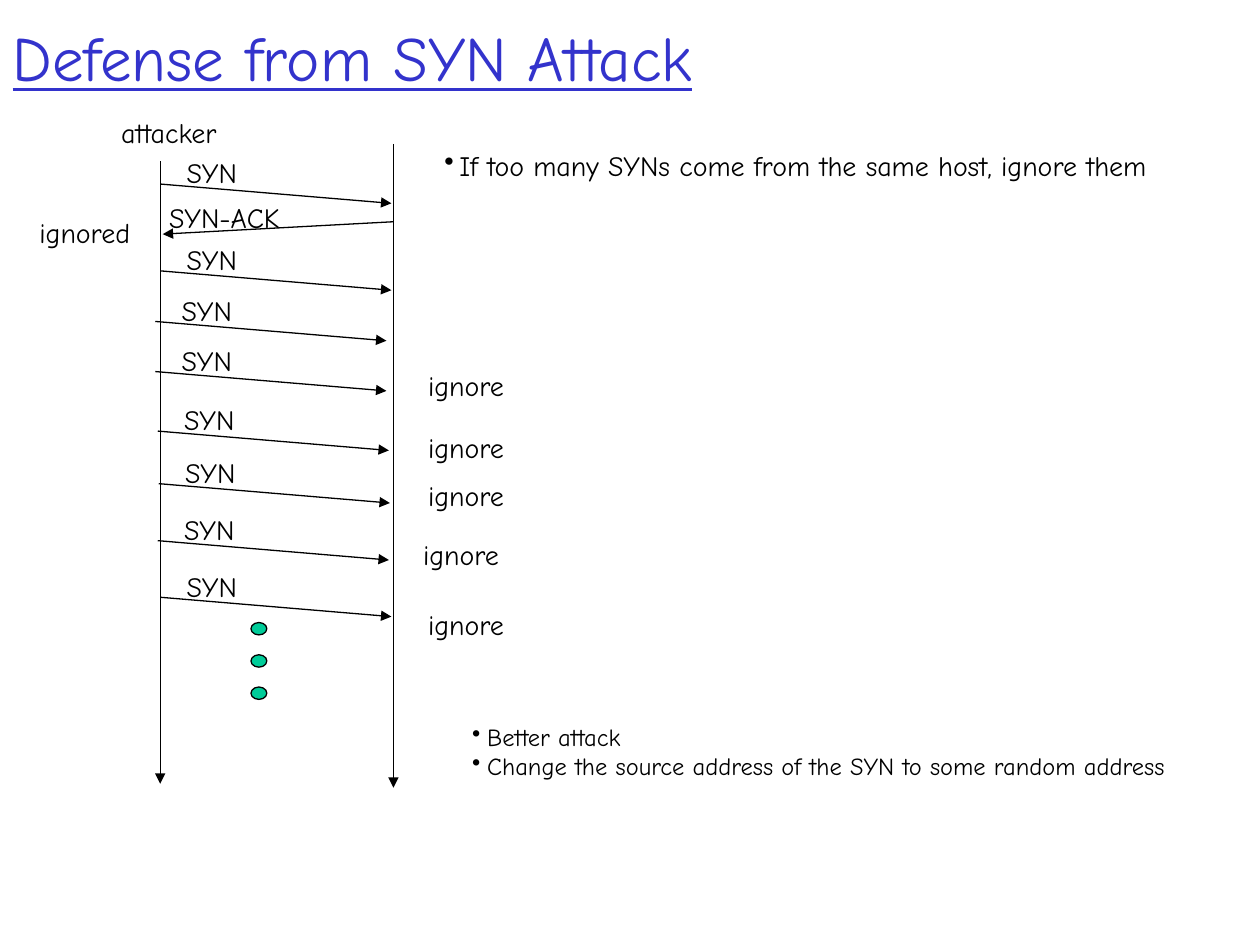
from lxml.etree import SubElement
from pptx import Presentation
from pptx.dml.color import RGBColor
from pptx.enum.shapes import MSO_CONNECTOR, MSO_SHAPE
from pptx.enum.text import MSO_ANCHOR, MSO_AUTO_SIZE, PP_ALIGN
from pptx.oxml.ns import qn
from pptx.util import Cm, Pt

FONT = "Comic Neue"
BLACK = RGBColor(0x00, 0x00, 0x00)
BLUE = RGBColor(0x33, 0x33, 0xCC)
GREEN = RGBColor(0x00, 0xCC, 0x99)

SERVER_X = 4.7  # distance between the two lifelines
LABEL_HEIGHT = 0.94
# Start of each SYN arrow, relative to the top of the attacker's lifeline
SYN_STARTS = [(0, 1.5), (0, 3.25), (-0.1, 4.27), (-0.1, 5.28),
              (-0.05, 6.48), (-0.03, 7.54), (-0.05, 8.69), (0, 9.83)]
IGNORE_SPOTS = [(5.1, 5.1), (5.1, 6.35), (5.1, 7.32), (5.0, 8.51), (5.1, 9.91)]


def style(para, size, color=BLACK):
    for span in para.runs:
        span.font.name = FONT
        span.font.size = Pt(size)
        span.font.color.rgb = color


def add_text(page, left, top, width, height, lines, size):
    box = page.shapes.add_textbox(Cm(left), Cm(top), Cm(width), Cm(height))
    frame = box.text_frame
    frame.text = "\n".join(lines)
    frame.word_wrap = False
    frame.auto_size = MSO_AUTO_SIZE.SHAPE_TO_FIT_TEXT
    for para in frame.paragraphs:
        style(para, size)
    return frame


def add_label(page, left, top, width, text):
    frame = add_text(page, left, top, width, LABEL_HEIGHT, [text], 16)
    frame.paragraphs[0].alignment = PP_ALIGN.CENTER


def add_arrow(page, x1, y1, x2, y2):
    arrow = page.shapes.add_connector(
        MSO_CONNECTOR.STRAIGHT, Cm(x1), Cm(y1), Cm(x2), Cm(y2))
    arrow.line.color.rgb = BLACK
    arrow.line.width = Pt(0.75)
    SubElement(arrow.line._get_or_add_ln(), qn("a:tailEnd"), type="triangle")
    SubElement(arrow._element.spPr, qn("a:effectLst"))


def add_title(page, left, top, width, height):
    title = page.shapes.title
    title.left, title.top = Cm(left), Cm(top)
    title.width, title.height = Cm(width), Cm(height)
    frame = title.text_frame
    frame.text = "Defense from SYN Attack"
    frame.vertical_anchor = MSO_ANCHOR.MIDDLE
    frame.auto_size = MSO_AUTO_SIZE.NONE
    para = frame.paragraphs[0]
    para.alignment = PP_ALIGN.LEFT
    style(para, 36, BLUE)
    para.runs[0].font.underline = True


def add_bullets(page, left, top, width, height, lines, size):
    frame = add_text(page, left, top, width, height, lines, size)
    for para in frame.paragraphs:
        props = para._p.get_or_add_pPr()
        props.set("marL", str(Cm(0.3)))
        props.set("indent", str(-Cm(0.3)))
        SubElement(props, qn("a:buChar"), char="•")


def add_sequence(page, left, top):
    """Message diagram; left is the attacker's lifeline, top its heading."""
    # Lifelines
    add_arrow(page, left, top + 1.04, left, top + 13.59)
    add_arrow(page, left + SERVER_X, top + 0.69, left + SERVER_X, top + 13.67)
    add_label(page, left - 1.22, top, 2.79, "attacker")

    # SYN messages
    for dx, dy in SYN_STARTS:
        x, y = left + dx, top + dy
        add_arrow(page, x, y, x + 4.66, y + 0.39)
        add_label(page, x + 0.19, y - 0.69, 1.7, "SYN")

    # The one reply, which the attacker ignores
    add_arrow(page, left + SERVER_X, top + 2.26, left + 0.05, top + 2.51)
    add_label(page, left - 2.75, top + 2.01, 2.46, "ignored")
    add_label(page, left - 0.23, top + 1.7, 3.05, "SYN-ACK")

    # Dots for further messages
    for step in range(3):
        dot = page.shapes.add_shape(
            MSO_SHAPE.OVAL, Cm(left + 1.83), Cm(top + 10.34 + 0.65 * step),
            Cm(0.32), Cm(0.25))
        dot.shadow.inherit = False
        dot.fill.solid()
        dot.fill.fore_color.rgb = GREEN
        dot.line.color.rgb = BLACK
        dot.line.width = Pt(0.75)

    # Server reactions
    for dx, dy in IGNORE_SPOTS:
        add_label(page, left + dx, top + dy, 2.13, "ignore")


def main():
    deck = Presentation()
    deck.slide_width, deck.slide_height = Cm(25.4), Cm(19.05)
    page = deck.slides.add_slide(deck.slide_layouts[5])
    add_title(page, 0, 0.3, 23.06, 1.68)
    add_bullets(page, 8.71, 2.87, 15.85, 1.63,
                ["If too many SYNs come from the same host, ignore them"], 16)
    add_sequence(page, 3.23, 2.21)
    add_bullets(page, 9.27, 14.43, 15.54, 1.45,
                ["Better attack",
                 "Change the source address of the SYN to some random address"], 14)
    deck.save("out.pptx")


if __name__ == "__main__":
    main()
